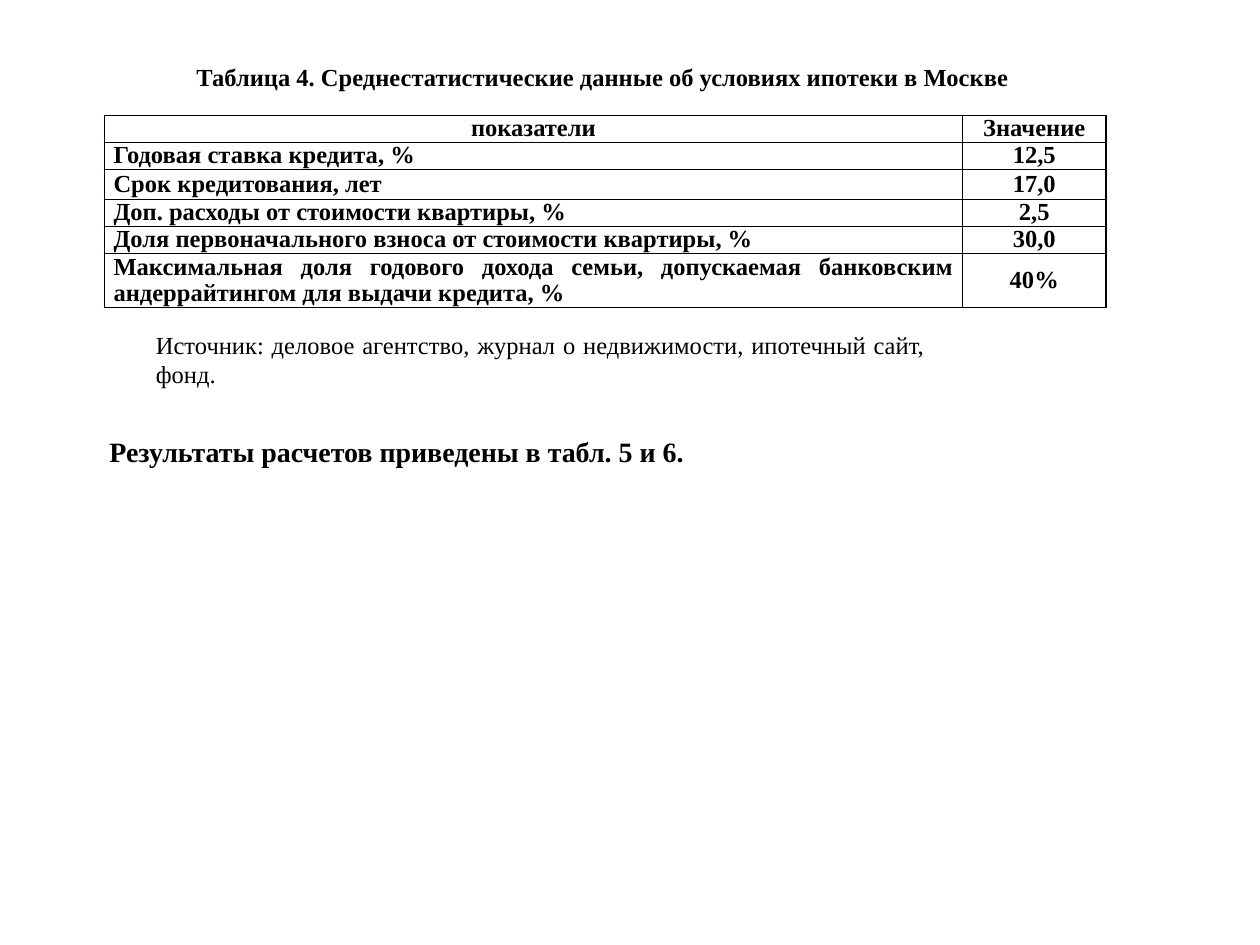
from dataclasses import dataclass, field

from lxml import etree
from pptx import Presentation
from pptx.dml.color import RGBColor
from pptx.enum.text import MSO_ANCHOR, PP_ALIGN
from pptx.oxml.ns import qn
from pptx.util import Pt

LEFT, CENTER, JUSTIFY = PP_ALIGN.LEFT, PP_ALIGN.CENTER, PP_ALIGN.JUSTIFY
MIDDLE, TOP = MSO_ANCHOR.MIDDLE, MSO_ANCHOR.TOP


@dataclass(frozen=True)
class Theme:
    font: str = "Times New Roman"
    ink: RGBColor = RGBColor(0, 0, 0)
    body_size: float = 14
    result_size: float = 16
    outer_line: float = 1
    inner_line: float = 0.5
    cell_margin: float = 5.2
    cell_spacing: float = 0.95


@dataclass(frozen=True)
class TextBlock:
    text: str
    left: float
    top: float
    width: float
    height: float
    align: PP_ALIGN = JUSTIFY
    anchor: MSO_ANCHOR = TOP
    wrap: bool = True
    first_line: float = 0
    font: dict = field(default_factory=dict)


@dataclass(frozen=True)
class Row:
    label: str
    value: str
    height: float = 15.4
    align: PP_ALIGN = JUSTIFY


THEME = Theme()

BLOCKS = [
    TextBlock("Таблица 4. Среднестатистические данные об условиях ипотеки в Москве",
              105.1, 31.7, 483.1, 24.2, anchor=MIDDLE, wrap=False, font={"bold": True}),
    TextBlock("Источник: деловое агентство, журнал о недвижимости, ипотечный сайт, фонд.",
              82, 185, 453.6, 41.2),
    TextBlock("Результаты расчетов приведены в табл. 5 и 6.",
              20, 244.8, 519.8, 26.6, align=LEFT, first_line=35.4,
              font={"bold": True, "size": Pt(THEME.result_size)}),
]

ROWS = [
    Row("показатели", "Значение", align=CENTER),
    Row("Годовая ставка кредита, %", "12,5", align=LEFT),
    Row("Срок кредитования, лет", "17,0", height=17.3, align=LEFT),
    Row("Доп. расходы от стоимости квартиры, %", "2,5"),
    Row("Доля первоначального взноса от стоимости квартиры, %", "30,0"),
    Row("Максимальная доля годового дохода семьи, допускаемая банковским "
        "андеррайтингом для выдачи кредита, %", "40%", height=30.8),
]
TABLE_LEFT, TABLE_TOP = 59.7, 66
COLUMN_WIDTHS = (490.3, 82.1)


def set_all(target, values: dict) -> None:
    for name, value in values.items():
        setattr(target, name, value)


def write_text(para, text: str, align: PP_ALIGN, font: dict) -> None:
    para.alignment = align
    span = para.add_run()
    span.text = text
    set_all(span.font, {"name": THEME.font, "size": Pt(THEME.body_size), "bold": False} | font)
    span.font.color.rgb = THEME.ink


def add_text(page, block: TextBlock) -> None:
    box = page.shapes.add_textbox(Pt(block.left), Pt(block.top), Pt(block.width), Pt(block.height))
    frame = box.text_frame
    set_all(frame, {"word_wrap": block.wrap, "vertical_anchor": block.anchor})
    para = frame.paragraphs[0]
    write_text(para, block.text, block.align, block.font)
    if block.first_line:
        para._p.get_or_add_pPr().set("indent", str(Pt(block.first_line)))


def set_borders(cell, widths: dict[str, float]) -> None:
    """Put solid edges, in schema order, ahead of the cell's fill."""
    properties = cell._tc.get_or_add_tcPr()
    for index, (edge, width) in enumerate(widths.items()):
        line = etree.Element(qn(f"a:{edge}"), w=str(Pt(width)))
        fill = etree.SubElement(line, qn("a:solidFill"))
        etree.SubElement(fill, qn("a:srgbClr"), val=str(THEME.ink))
        properties.insert(index, line)


def fill_cell(cell, text: str, align: PP_ALIGN) -> None:
    set_all(cell, {"margin_left": Pt(THEME.cell_margin), "margin_right": Pt(THEME.cell_margin),
                   "margin_top": 0, "margin_bottom": 0, "vertical_anchor": MIDDLE})
    cell.fill.background()
    para = cell.text_frame.paragraphs[0]
    para.line_spacing = THEME.cell_spacing
    write_text(para, text, align, {"bold": True})


def add_rate_table(page, rows: list[Row]) -> None:
    table = page.shapes.add_table(
        len(rows), len(COLUMN_WIDTHS), Pt(TABLE_LEFT), Pt(TABLE_TOP),
        Pt(sum(COLUMN_WIDTHS)), Pt(sum(row.height for row in rows))).table
    set_all(table, {"first_row": False, "horz_banding": False})
    for column, width in zip(table.columns, COLUMN_WIDTHS):
        column.width = Pt(width)
    last_row, last_column = len(rows) - 1, len(COLUMN_WIDTHS) - 1
    for r, row in enumerate(rows):
        table.rows[r].height = Pt(row.height)
        for c, (text, align) in enumerate([(row.label, row.align), (row.value, CENTER)]):
            cell = table.cell(r, c)
            fill_cell(cell, text, align)
            outer = {"lnL": c == 0, "lnR": c == last_column, "lnT": r == 0, "lnB": r == last_row}
            set_borders(cell, {edge: THEME.outer_line if is_outer else THEME.inner_line
                               for edge, is_outer in outer.items()})


def main() -> None:
    deck = Presentation()
    set_all(deck, {"slide_width": Pt(720), "slide_height": Pt(540)})
    page = deck.slides.add_slide(deck.slide_layouts[6])
    add_rate_table(page, ROWS)
    for block in BLOCKS:
        add_text(page, block)
    deck.save("out.pptx")


if __name__ == "__main__":
    main()
